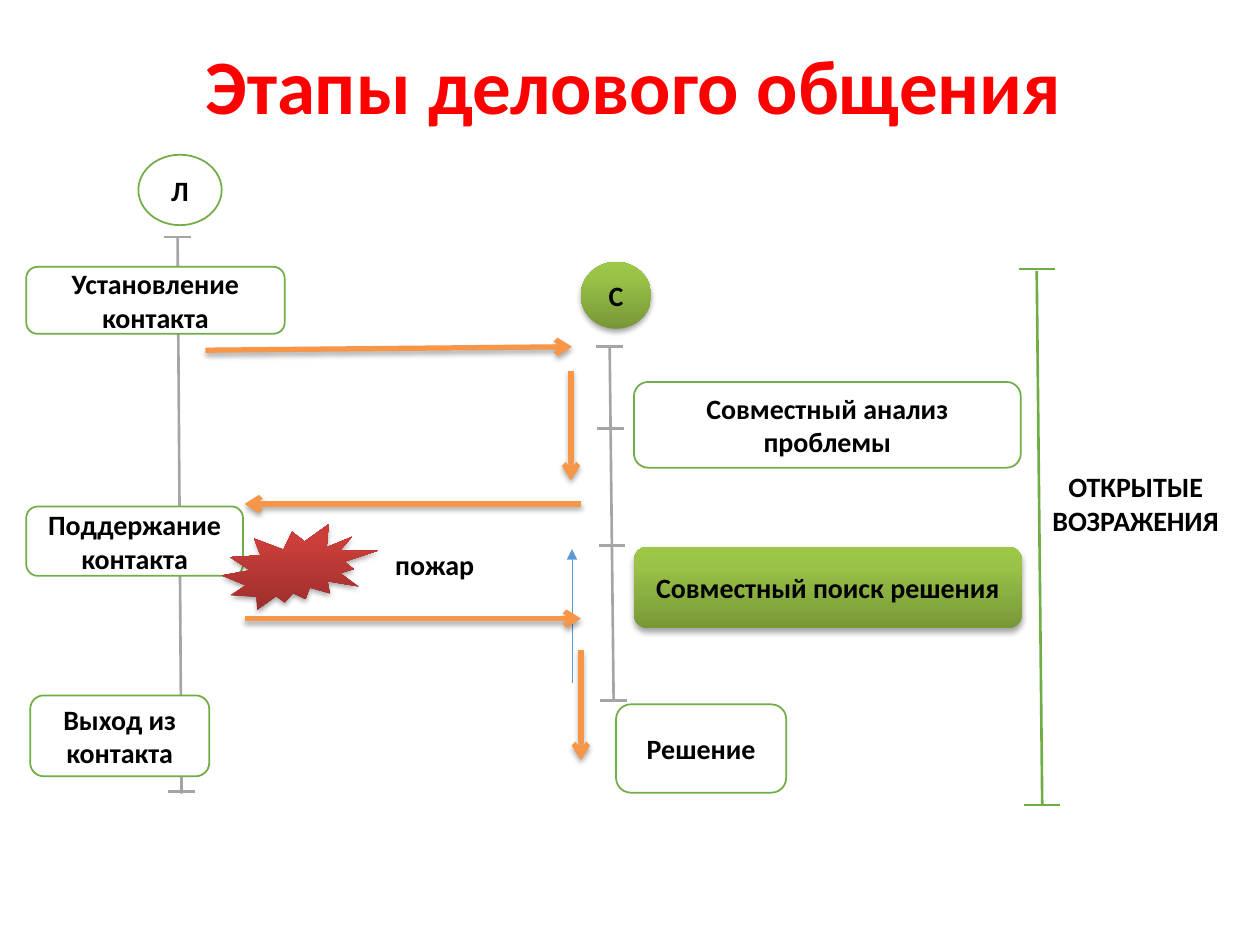
from copy import deepcopy
from dataclasses import dataclass

from lxml.etree import SubElement
from pptx import Presentation
from pptx.dml.color import RGBColor
from pptx.enum.shapes import MSO_CONNECTOR, MSO_SHAPE
from pptx.enum.text import MSO_ANCHOR, PP_ALIGN
from pptx.oxml.ns import qn
from pptx.util import Cm, Pt

COLORS = {
    "title": "FF0000", "text": "000000", "white": "FFFFFF",
    "grey": "A5A5A5", "green": "70AD47", "blue": "5B9BD5", "orange": "F79646",
}
GRADIENTS = {
    "green": ((0, "779737"), (0.8, "9BC348"), (1, "9DC746")),
    "red": ((0, "9C2F2D"), (0.8, "CB3E3A"), (1, "CE3B37")),
}
OVAL, BOX, BURST = MSO_SHAPE.OVAL, MSO_SHAPE.ROUNDED_RECTANGLE, MSO_SHAPE.EXPLOSION2


@dataclass
class Node:
    text: str
    left: float
    top: float
    width: float
    height: float
    kind: MSO_SHAPE = BOX
    outline: str | None = "green"
    gradient: str | None = None
    align: PP_ALIGN = PP_ALIGN.CENTER


@dataclass
class Scale:
    """An axis with horizontal ticks at the given heights."""
    start: tuple[float, float]
    end: tuple[float, float]
    ticks: tuple[float, ...]
    tick_width: float
    color: str


@dataclass
class Arrow:
    start: tuple[float, float]
    end: tuple[float, float]
    color: str = "orange"
    width: float = 3
    head: str = "arrow"
    shadow: bool = True


PARTNER_SCALES = [
    Scale((3.58, 4.78), (3.66, 16), (4.78, 15.95), 0.53, "grey"),
    Scale((12.29, 6.99), (12.37, 14.1), (6.99, 8.64, 11, 14.12), 0.53, "grey"),
]
OBJECTIONS_SCALE = Scale((20.9, 5.46), (21.01, 16.23), (5.42, 16.23), 0.72, "green")

NODES = [
    Node("Л", 2.79, 3.12, 1.68, 1.42, OVAL),
    Node("С", 11.71, 5.28, 1.42, 1.35, OVAL, None, "green"),
    Node("Установление контакта", 0.53, 5.38, 5.21, 1.35),
    Node("Поддержание контакта", 0.53, 10.21, 4.37, 1.4),
    Node("Выход из контакта", 0.61, 14.02, 3.61, 1.63),
    Node("пожар", 7.65, 10.67, 2.51, 1.4, outline=None, align=PP_ALIGN.LEFT),
    Node("Совместный анализ проблемы", 12.78, 7.7, 7.8, 1.73),
    Node("Совместный поиск решения", 12.78, 11.02, 7.82, 1.65, BOX, None, "green"),
    Node("Решение", 12.42, 14.2, 3.43, 1.78),
    Node("ОТКРЫТЫЕ ВОЗРАЖЕНИЯ", 20.7, 4.78, 4.39, 10.74, outline=None),
]
FIRE = Node("", 4.47, 10.57, 3.15, 1.73, BURST, None, "red")

RETURN_ARROW = Arrow((11.53, 13.77), (11.53, 11.07), "blue", 0.5, "triangle", False)
ARROWS = [
    Arrow((4.14, 7.06), (11.53, 6.99)),
    Arrow((11.71, 10.16), (4.93, 10.16)),
    Arrow((4.93, 12.47), (11.71, 12.47)),
    Arrow((11.51, 7.47), (11.51, 9.68)),
    Arrow((11.71, 13.11), (11.71, 15.32)),
]


def rgb(name: str) -> RGBColor:
    return RGBColor.from_string(COLORS[name])


def write_text(shape, text: str, *, size: float = 16, color: str = "text",
               align: PP_ALIGN = PP_ALIGN.CENTER) -> None:
    frame = shape.text_frame
    frame.word_wrap = True
    frame.vertical_anchor = MSO_ANCHOR.MIDDLE
    paragraph = frame.paragraphs[0]
    paragraph.alignment = align
    run = paragraph.add_run()
    run.text = text
    run.font.name = "Calibri"
    run.font.size = Pt(size)
    run.font.bold = True
    run.font.color.rgb = rgb(color)


def add_shadow(effects) -> None:
    shadow = SubElement(effects, qn("a:outerShdw"), blurRad="40000", dist="23000",
                        dir="5400000", rotWithShape="0")
    color = SubElement(shadow, qn("a:srgbClr"), val="000000")
    SubElement(color, qn("a:alpha"), val="35000")


def fill_gradient(shape, stops: tuple[tuple[float, str], ...]) -> None:
    shape.fill.gradient()
    shape.fill.gradient_angle = 90
    stop_list = next(shape._element.spPr.iter(qn("a:gsLst")))
    while len(stop_list) < len(stops):
        stop_list.append(deepcopy(stop_list[-1]))
    for stop, (position, color) in zip(shape.fill.gradient_stops, stops):
        stop.position = position
        stop.color.rgb = RGBColor.from_string(color)


def draw_node(slide, node: Node) -> None:
    shape = slide.shapes.add_shape(node.kind, Cm(node.left), Cm(node.top),
                                   Cm(node.width), Cm(node.height))
    if node.outline:
        shape.line.color.rgb = rgb(node.outline)
        shape.line.width = Pt(1)
    else:
        shape.line.fill.background()
    shape.shadow.inherit = False
    if node.gradient:
        fill_gradient(shape, GRADIENTS[node.gradient])
        add_shadow(shape._element.spPr.find(qn("a:effectLst")))
    else:
        shape.fill.solid()
        shape.fill.fore_color.rgb = rgb("white")
    if node.text:
        write_text(shape, node.text, align=node.align)


def draw_line(slide, start: tuple[float, float], end: tuple[float, float], color: str,
              width: float = 1.5, head: str | None = None, shadow: bool = False) -> None:
    connector = slide.shapes.add_connector(
        MSO_CONNECTOR.STRAIGHT, *(Cm(value) for value in (*start, *end)))
    connector.line.color.rgb = rgb(color)
    connector.line.width = Pt(width)
    properties = connector._element.spPr
    if head:
        SubElement(properties.find(qn("a:ln")), qn("a:tailEnd"), type=head)
    effects = SubElement(properties, qn("a:effectLst"))
    if shadow:
        add_shadow(effects)


def draw_scale(slide, scale: Scale) -> None:
    draw_line(slide, scale.start, scale.end, scale.color)
    (left, top), (right, bottom) = scale.start, scale.end
    for y in scale.ticks:
        center = left + (right - left) * (y - top) / (bottom - top)
        half = scale.tick_width / 2
        draw_line(slide, (center - half, y), (center + half, y), scale.color)


def draw_arrow(slide, arrow: Arrow) -> None:
    draw_line(slide, arrow.start, arrow.end, arrow.color, arrow.width,
              arrow.head, arrow.shadow)


def main() -> None:
    presentation = Presentation()
    presentation.slide_width, presentation.slide_height = Cm(25.4), Cm(19.05)
    slide = presentation.slides.add_slide(presentation.slide_layouts[5])

    title = slide.shapes.title
    title.left, title.top, title.width, title.height = Cm(1.35), Cm(0.1), Cm(22.86), Cm(3.18)
    write_text(title, "Этапы делового общения", size=44, color="title")

    for scale in PARTNER_SCALES:
        draw_scale(slide, scale)
    draw_arrow(slide, RETURN_ARROW)
    for node in NODES:
        draw_node(slide, node)
    draw_scale(slide, OBJECTIONS_SCALE)
    for arrow in ARROWS:
        draw_arrow(slide, arrow)
    draw_node(slide, FIRE)

    presentation.save("out.pptx")


if __name__ == "__main__":
    main()
